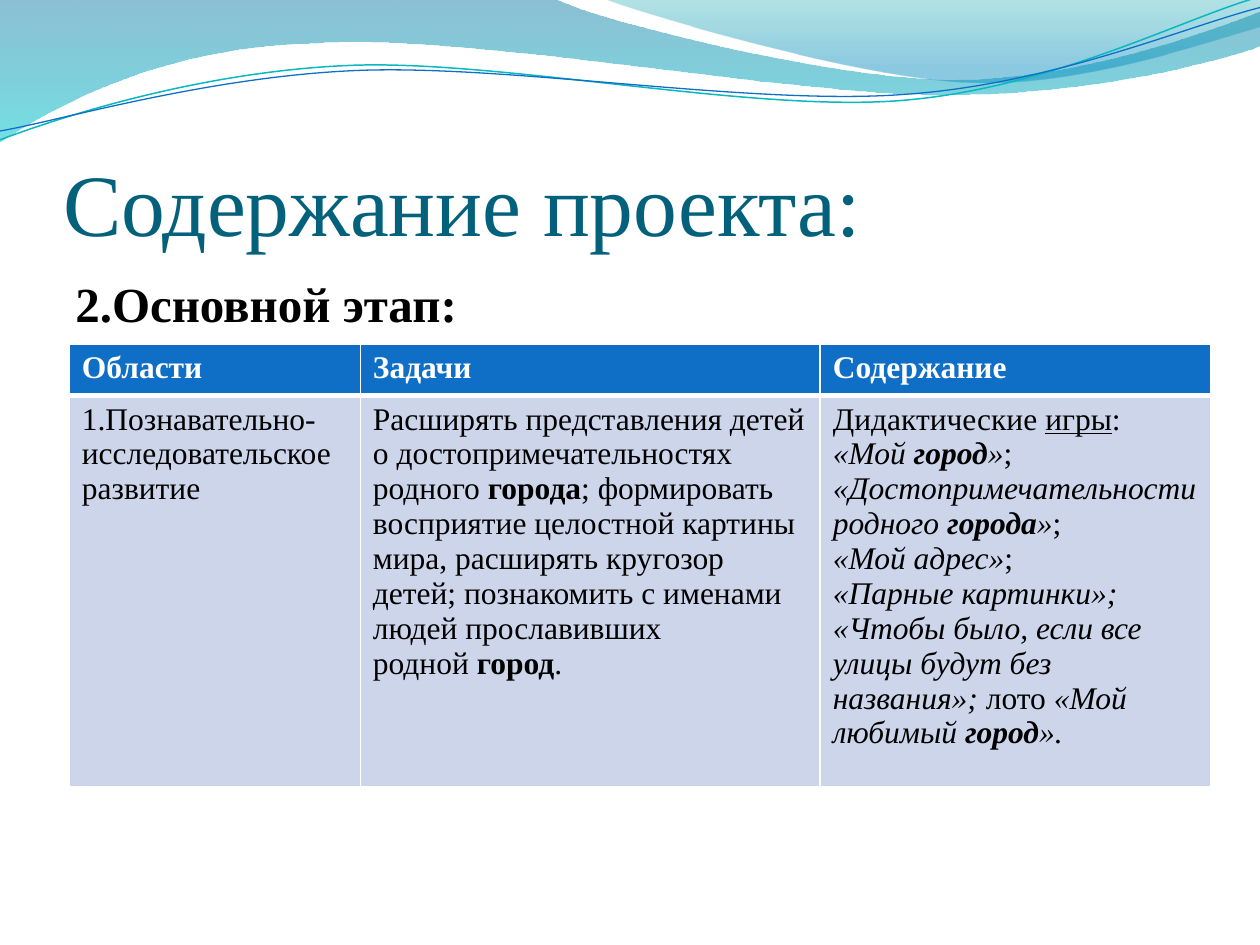
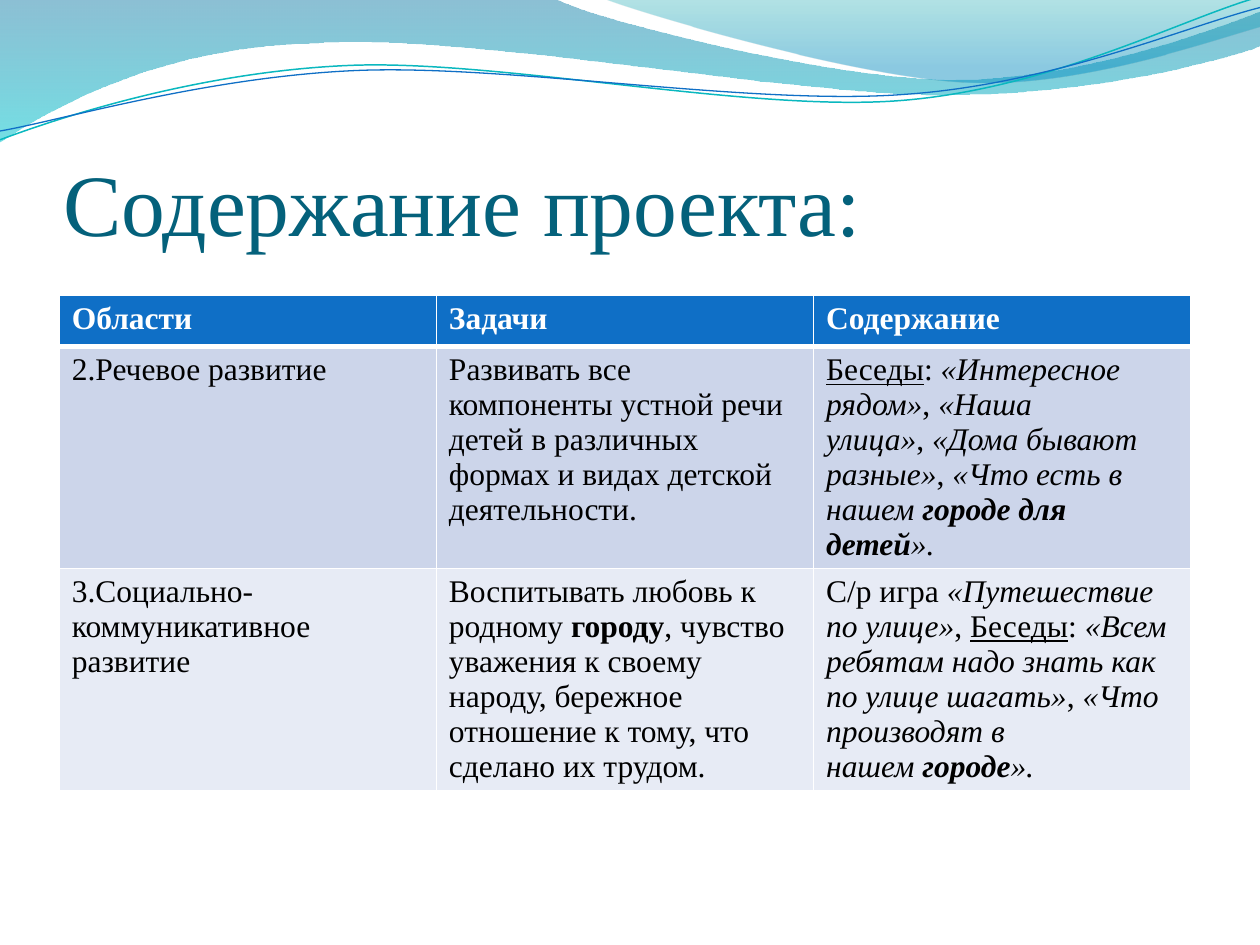
"""Build two slides on the main stage of a preschool project about the home town."""
import itertools

import pptx
import pptx.dml.color
import pptx.enum.text
import pptx.oxml
import pptx.oxml.ns
import pptx.util
from pptx.dml.color import RGBColor

WHITE = RGBColor(0xFF, 0xFF, 0xFF)
BLACK = RGBColor(0x00, 0x00, 0x00)
TITLE_TEAL = RGBColor(0x04, 0x61, 0x7B)
HEADER_BLUE = RGBColor(0x0F, 0x6F, 0xC6)
ROW_BLUE = RGBColor(0xCC, 0xD5, 0xEA)
ROW_PALE = RGBColor(0xE7, 0xEB, 0xF5)
WAVE_BLUE = RGBColor(0x00, 0x74, 0xA1)
WAVE_CYAN = RGBColor(0x00, 0xC6, 0xCF)
CREST_TEAL = RGBColor(0x00, 0xA1, 0xA9)
CREST_BLUE = RGBColor(0x00, 0x8B, 0xBF)
THREAD_TEAL = RGBColor(0x0A, 0xB8, 0xBF)

FONT = "Times New Roman"
COLUMNS = 10
UNITS_PER_CELL = 1000
ROW_HEIGHT = 0.41
MARKS = {"*": "bold", "_": "italic", "~": "underline"}
HARD_SPACE_MARK, HARD_SPACE = "^", chr(160)

WAVE = [(0, 0), (4.4, -0.01), (4.76, 0.17, 6.64, 0.63, 7.58, 0.63),
        (8.53, 0.63, 9.58, 0.26, 10, 0.09), (10.01, 0.36),
        (9.83, 0.44, 8.7, 0.76, 7.46, 0.75), (6.22, 0.75, 3.82, 0.28, 2.57, 0.34),
        (1.29, 0.36, 0.46, 0.83, -0.01, 1.13)]
CREST = [(4.79, -0.01), (5.09, 0.11, 6.82, 0.62, 7.69, 0.65),
         (8.56, 0.69, 9.61, 0.32, 10, 0.21), (10, 0)]
TEAL_THREAD = [(0, 1.11), (0.48, 0.93, 1.58, 0.57, 2.77, 0.52),
               (3.95, 0.47, 5.93, 0.89, 7.13, 0.8), (8.33, 0.71, 9.38, 0.15, 9.98, -0.02)]
BLUE_THREAD = [(0, 1.04), (0.47, 0.96, 1.64, 0.61, 2.83, 0.56),
               (4.03, 0.51, 5.97, 0.84, 7.17, 0.75), (8.36, 0.67, 9.41, 0.21, 10, 0.06)]

TITLE = "Содержание проекта:"
HEADINGS = ["Области", "Задачи", "Содержание"]
COGNITIVE = [
    "1.Познавательно-исследовательское развитие",
    "Расширять представления детей о достопримечательностях родного^*города*; "
    "формировать восприятие целостной картины мира, расширять кругозор детей; "
    "познакомить с именами людей прославивших родной^*город*.^",
    "Дидактические ~игры~:\n_«Мой^*город*»_;\n"
    "_«Достопримечательности родного^*города*»_;\n_«Мой адрес»_;\n"
    "_«Парные картинки»;_\n_«Чтобы было, если все улицы будут без названия»;_"
    " лото^_«Мой любимый^*город*»._",
]
SPEECH = [
    "2.Речевое развитие",
    "Развивать все компоненты устной речи детей в различных формах и видах "
    "детской деятельности.",
    "~Беседы~:^_«Интересное рядом»_,^_«Наша улица»_,^_«Дома бывают разные»_,^"
    "_«Что есть в нашем^*городе для детей*»._",
]
SOCIAL = [
    "3.Социально-коммуникативное развитие",
    "Воспитывать любовь к родному^*городу*, чувство уважения к своему народу, "
    "бережное отношение к тому, что сделано их трудом.^",
    "С/р игра^_«Путешествие по улице»_, ~Беседы~:^"
    "_«Всем ребятам надо знать как по улице шагать»_,^"
    "_«Что производят в нашем^*городе*»._",
]


def write(frame, text, size=18, color=BLACK, bold=False, space_before=0):
    """Fill a text frame; * _ ~ switch bold, italic, underline and ^ is a hard space."""
    frame.word_wrap = True
    for number, line in enumerate(text.replace(HARD_SPACE_MARK, HARD_SPACE).split("\n")):
        paragraph = frame.paragraphs[0] if number == 0 else frame.add_paragraph()
        paragraph.alignment = pptx.enum.text.PP_ALIGN.LEFT
        paragraph.space_before = pptx.util.Pt(space_before)
        style = {"bold": bold, "italic": False, "underline": False}
        for is_mark, letters in itertools.groupby(line, lambda letter: letter in MARKS):
            if is_mark:
                for mark in letters:
                    style[MARKS[mark]] = not style[MARKS[mark]]
                continue
            run = paragraph.add_run()
            run.text = "".join(letters)
            run.font.name, run.font.size = FONT, pptx.util.Pt(size)
            run.font.color.rgb = color
            for trait, state in style.items():
                setattr(run.font, trait, state)


def bend(shape, steps, left, top):
    """Turn the straight steps that have control points into cubic curves."""
    straight = list(shape.element.spPr.iter(pptx.oxml.ns.qn("a:lnTo")))
    for line, step in zip(straight, steps):
        if len(step) == 2:
            continue
        points = "".join(
            f'<a:pt x="{round((x - left) * UNITS_PER_CELL)}" '
            f'y="{round((y - top) * UNITS_PER_CELL)}"/>'
            for x, y in zip(step[::2], step[1::2]))
        curve = pptx.oxml.parse_xml(
            f'<a:cubicBezTo {pptx.oxml.ns.nsdecls("a")}>{points}</a:cubicBezTo>')
        line.getparent().replace(line, curve)


def border(cell, **widths):
    """Draw white borders of the given widths on a cell's sides L, R, T, B."""
    properties = cell._tc.get_or_add_tcPr()
    for side, width in widths.items():
        properties.append(pptx.oxml.parse_xml(
            f'<a:ln{side} {pptx.oxml.ns.nsdecls("a")} w="{pptx.util.Pt(width)}">'
            f'<a:solidFill><a:srgbClr val="{WHITE}"/></a:solidFill></a:ln{side}>'))


class Deck:
    """Hold the presentation, its grid and the current slide."""

    def __init__(self):
        """Open an empty deck of 10 by 7.5 grid cells."""
        self.show = pptx.Presentation()
        self.show.slide_width = pptx.util.Inches(10)
        self.show.slide_height = pptx.util.Inches(7.5)
        self.cell = self.show.slide_width // COLUMNS
        self.layout = self.show.slide_layouts[5]
        self.slide = None
        self.backdrop_count = 0

    def grid(self, *cells):
        """Turn grid columns and rows into lengths."""
        return [pptx.util.Emu(round(count * self.cell)) for count in cells]

    def add_slide(self, title):
        """Start a slide with its title."""
        self.slide = self.show.slides.add_slide(self.layout)
        heading = self.slide.shapes.title
        heading.left, heading.top, heading.width, heading.height = self.grid(0.5, 0.77, 9, 1.25)
        frame = heading.text_frame
        frame.auto_size = pptx.enum.text.MSO_AUTO_SIZE.NONE
        frame.vertical_anchor = pptx.enum.text.MSO_ANCHOR.BOTTOM
        frame.margin_left = frame.margin_right = frame.margin_bottom = 0
        frame.margin_top = self.grid(0.05)[0]
        write(frame, title, size=50, color=TITLE_TEAL)

    def backdrop(self, outline, close):
        """Draw an outline and move it to the layout behind the placeholders."""
        ends = [step[-2:] for step in outline]
        points = [(x * UNITS_PER_CELL, y * UNITS_PER_CELL) for x, y in ends]
        builder = self.slide.shapes.build_freeform(*points[0], scale=self.cell / UNITS_PER_CELL)
        builder.add_line_segments(points[1:], close=close)
        shape = builder.convert_to_shape()
        bend(shape, outline[1:], min(x for x, _ in ends), min(y for _, y in ends))
        shape.shadow.inherit = False
        shape.element.nvSpPr.cNvPr.id = 100 + self.backdrop_count
        self.layout.shapes.element.insert(2 + self.backdrop_count, shape.element)
        self.backdrop_count += 1
        return shape

    def band(self, outline, *stops):
        """Add a band with a downward gradient of (position, colour, opacity) stops."""
        band = self.backdrop(outline, close=True)
        band.line.fill.background()
        band.fill.gradient()
        band.fill.gradient_angle = 270
        for stop, (position, color, _) in zip(band.fill.gradient_stops, stops):
            stop.position, stop.color.rgb = position, color
        tints = band.element.spPr.iter(pptx.oxml.ns.qn("a:srgbClr"))
        for tint, (_, _, opacity) in zip(list(tints), stops):
            alpha = tint.makeelement(pptx.oxml.ns.qn("a:alpha"), {"val": str(opacity * 1000)})
            tint.append(alpha)

    def thread(self, outline, color, width):
        """Add a thin wavy line."""
        thread = self.backdrop(outline, close=False)
        thread.fill.background()
        thread.line.color.rgb = color
        thread.line.width = pptx.util.Pt(width)

    def text(self, place, text, **style):
        """Add a text box."""
        write(self.slide.shapes.add_textbox(*self.grid(*place)).text_frame, text, **style)

    def table(self, corner, widths, height, rows):
        """Add a table with a header row and banded rows that grow with their text."""
        place = self.grid(*corner, sum(widths), height)
        holder = self.slide.shapes.add_table(len(rows), len(widths), *place)
        for column, width in zip(holder.table.columns, self.grid(*widths)):
            column.width = width
        for number, (row, texts) in enumerate(zip(holder.table.rows, rows)):
            row.height = self.grid(ROW_HEIGHT)[0]
            header = number == 0
            fill = HEADER_BLUE if header else (ROW_PALE, ROW_BLUE)[number % 2]
            for cell, text in zip(row.cells, texts):
                border(cell, L=1, R=1, T=3 if number == 1 else 1, B=3 if header else 1)
                cell.fill.solid()
                cell.fill.fore_color.rgb = fill
                write(cell.text_frame, text, color=WHITE if header else BLACK, bold=header)
        holder.height = place[-1]


def main():
    """Build and save the deck."""
    deck = Deck()
    deck.add_slide(TITLE)
    deck.band(WAVE, (0, WAVE_BLUE, 45), (1, WAVE_CYAN, 55))
    deck.band(CREST, (0, CREST_TEAL, 30), (0.8, CREST_BLUE, 45))
    deck.thread(TEAL_THREAD, THREAD_TEAL, 0.85)
    deck.thread(BLUE_THREAD, HEADER_BLUE, 0.75)
    deck.text((0.5, 2.12, 9, 4.8), "2.Основной этап:", size=28, bold=True, space_before=2.5)
    deck.table((0.55, 2.73), (2.31, 3.65, 3.1), 3.51, [HEADINGS, COGNITIVE])

    deck.add_slide(TITLE)
    deck.table((0.47, 2.34), [8.98 / 3] * 3, 4.21, [HEADINGS, SPEECH, SOCIAL])
    deck.show.save("out.pptx")


if __name__ == "__main__":
    main()
